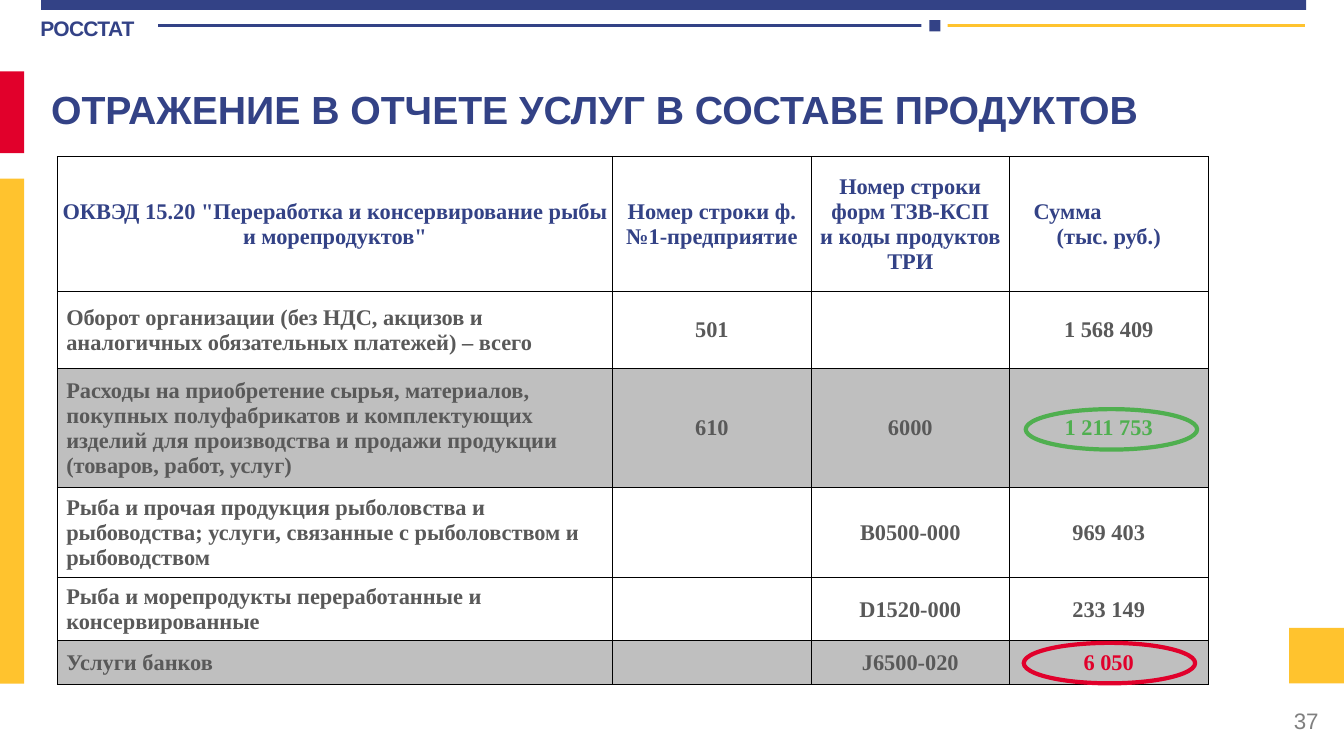
from dataclasses import dataclass

from lxml import etree
from pptx import Presentation
from pptx.enum import shapes, text
from pptx.oxml import ns
from pptx.util import Cm, Pt
from pptx.dml.color import RGBColor

COLORS = {
    "navy": "334286", "red": "E1002B", "amber": "FFC32E", "green": "4FAF4F",
    "gray": "595959", "band": "BFBFBF", "number": "808080",
    "white": "FFFFFF", "black": "000000",
}
CENTER, LEFT, RIGHT = text.PP_ALIGN.CENTER, text.PP_ALIGN.LEFT, text.PP_ALIGN.RIGHT
MIDDLE = text.MSO_ANCHOR.MIDDLE


@dataclass
class Bar:
    left: float
    top: float
    width: float
    height: float
    color: str


@dataclass
class Rule:
    start: float
    end: float
    color: str


@dataclass
class Ring:
    left: float
    top: float
    color: str


@dataclass
class Label:
    left: float
    top: float
    width: float
    height: float
    words: str
    size: int
    color: str
    bold: bool = True
    align: text.PP_ALIGN = LEFT
    margins: tuple = (0.25, 0.13, 0.25, 0.13)
    spacing: int = 0


@dataclass
class Row:
    height: float
    item: str
    line: str
    code: str
    amount: str
    banded: bool = False
    amount_color: str = "gray"


SIDE_BARS = [
    Bar(1.04, 0, 31.88, 0.25, "navy"),
    Bar(0, 1.8, 0.61, 2.06, "red"),
    Bar(0, 4.5, 0.61, 12.73, "amber"),
    Bar(32.49, 15.82, 1.38, 1.4, "amber"),
]
HEADER_RULES = [Rule(3.99, 23.7, "navy"), Rule(23.34, 32.89, "amber")]
HEADER_SQUARES = [
    Bar(23.22, 0.51, 0.66, 0.28, "white"),
    Bar(23.42, 0.51, 0.28, 0.28, "navy"),
]
LABELS = [
    Label(0.99, 0.33, 2.92, 0.81, "РОССТАТ", 15, "navy",
          margins=(0.03, 0.07, 0, 0), spacing=-50),
    Label(1.04, 1.98, 31.47, 1.55,
          "ОТРАЖЕНИЕ В ОТЧЕТЕ УСЛУГ В СОСТАВЕ ПРОДУКТОВ", 28, "navy"),
    Label(25.86, 17.65, 7.62, 1.02, "37", 16, "number", False, RIGHT),
]
COLUMN_WIDTHS = [14, 5, 5, 5]
HEADER_HEIGHT = 3.4
HEADINGS = [
    ['ОКВЭД 15.20 "Переработка и консервирование рыбы и морепродуктов"'],
    ["Номер строки ф.№1-предприятие"],
    ["Номер строки форм ТЗВ-КСП", "и коды продуктов ТРИ"],
    ["Сумма", "(тыс. руб.)"],
]
ROWS = [
    Row(1.94, "Оборот организации (без НДС, акцизов и аналогичных обязательных "
        "платежей) – всего", "501", "", "1 568 409"),
    Row(3, "Расходы на приобретение сырья, материалов, покупных полуфабрикатов и "
        "комплектующих изделий для производства и продажи продукции "
        "(товаров, работ, услуг)", "610", "6000", "1 211 753", True, "green"),
    Row(2.27, "Рыба и прочая продукция рыболовства и рыбоводства; услуги, связанные "
        "с рыболовством и рыбоводством", "", "B0500-000", "969 403"),
    Row(1.59, "Рыба и морепродукты переработанные и консервированные",
        "", "D1520-000", "233 149"),
    Row(1.11, "Услуги банков", "", "J6500-020", "6 050", True, "red"),
]
RINGS = [Ring(25.8, 16.2, "red"), Ring(25.85, 10.31, "green")]


def rgb(color: str) -> RGBColor:
    return RGBColor.from_string(COLORS[color])


def add_words(paragraph, words: str, font: str, size: int, color: str, bold: bool):
    run = paragraph.add_run()
    run.text = words
    run.font.name, run.font.size, run.font.bold = font, Pt(size), bold
    run.font.color.rgb = rgb(color)
    return run


def add_bar(slide, bar: Bar) -> None:
    block = slide.shapes.add_shape(shapes.MSO_SHAPE.RECTANGLE, Cm(bar.left), Cm(bar.top),
                                   Cm(bar.width), Cm(bar.height))
    block.shadow.inherit = False
    block.fill.solid()
    block.fill.fore_color.rgb = rgb(bar.color)
    block.line.fill.background()


def add_rule(slide, rule: Rule) -> None:
    stroke = slide.shapes.add_connector(shapes.MSO_CONNECTOR.STRAIGHT, Cm(rule.start),
                                        Cm(0.64), Cm(rule.end), Cm(0.64))
    stroke.line.color.rgb = rgb(rule.color)
    stroke.line.width = Pt(2)
    etree.SubElement(stroke._element.spPr, ns.qn("a:effectLst"))


def add_ring(slide, ring: Ring) -> None:
    oval = slide.shapes.add_shape(shapes.MSO_SHAPE.OVAL, Cm(ring.left), Cm(ring.top),
                                  Cm(4.32), Cm(1.02))
    oval.shadow.inherit = False
    oval.fill.background()
    oval.line.color.rgb = rgb(ring.color)
    oval.line.width = Pt(3)


def add_label(slide, label: Label) -> None:
    frame = slide.shapes.add_textbox(Cm(label.left), Cm(label.top), Cm(label.width),
                                     Cm(label.height)).text_frame
    frame.word_wrap = True
    frame.margin_left, frame.margin_top, frame.margin_right, frame.margin_bottom = (
        Cm(margin) for margin in label.margins)
    frame.vertical_anchor = text.MSO_ANCHOR.TOP if label.spacing else MIDDLE
    paragraph = frame.paragraphs[0]
    paragraph.alignment = label.align
    run = add_words(paragraph, label.words, "Arial", label.size, label.color, label.bold)
    if label.spacing:
        run._r.get_or_add_rPr().set("spc", str(label.spacing))


def style_cell(cell, banded: bool) -> None:
    cell.vertical_anchor = MIDDLE
    cell.margin_left = cell.margin_right = cell.margin_top = Cm(0.03)
    cell.margin_bottom = Cm(0)
    properties = cell._tc.get_or_add_tcPr()
    for side in ("lnL", "lnR", "lnT", "lnB"):
        border = etree.SubElement(properties, ns.qn(f"a:{side}"), w=str(Pt(0.5)))
        fill = etree.SubElement(border, ns.qn("a:solidFill"))
        etree.SubElement(fill, ns.qn("a:srgbClr"), val=COLORS["black"])
    if banded:
        cell.fill.solid()
        cell.fill.fore_color.rgb = rgb("band")
    else:
        cell.fill.background()


def fill_cell(cell, lines: list[str], color: str, indent: float = 0) -> None:
    """Centre the lines; a positive indent sets the first one from the left."""
    frame = cell.text_frame
    for index, words in enumerate(lines):
        paragraph = frame.add_paragraph() if index else frame.paragraphs[0]
        paragraph.alignment = CENTER
        if indent and not index:
            paragraph.alignment = LEFT
            paragraph._p.get_or_add_pPr().set("marL", str(Cm(indent)))
        add_words(paragraph, words, "Times New Roman", 16, color, True)


def add_report(slide) -> None:
    heights = [HEADER_HEIGHT] + [row.height for row in ROWS]
    report = slide.shapes.add_table(len(heights), len(COLUMN_WIDTHS), Cm(1.44), Cm(3.94),
                                    Cm(sum(COLUMN_WIDTHS)), Cm(sum(heights))).table
    report.first_row = report.horz_banding = False
    for column, width in zip(report.columns, COLUMN_WIDTHS):
        column.width = Cm(width)
    for line, height in zip(report.rows, heights):
        line.height = Cm(height)

    # Headings
    for column, lines in enumerate(HEADINGS):
        cell = report.cell(0, column)
        style_cell(cell, False)
        fill_cell(cell, lines, "navy", 0.58 if lines[0] == "Сумма" else 0)

    # Indicators
    for number, row in enumerate(ROWS, 1):
        for column, words in enumerate((row.item, row.line, row.code, row.amount)):
            cell = report.cell(number, column)
            style_cell(cell, row.banded)
            if words:
                fill_cell(cell, [words], row.amount_color if column == 3 else "gray",
                          0.2 if column == 0 else 0)


def main() -> None:
    deck = Presentation()
    deck.slide_width, deck.slide_height = Cm(33.87), Cm(19.05)
    slide = deck.slides.add_slide(deck.slide_layouts[6])

    # Frame of the slide
    for bar in SIDE_BARS:
        add_bar(slide, bar)
    for rule in HEADER_RULES:
        add_rule(slide, rule)
    for square in HEADER_SQUARES:
        add_bar(slide, square)

    # Content
    for label in LABELS:
        add_label(slide, label)
    add_report(slide)
    for ring in RINGS:
        add_ring(slide, ring)
    deck.save("out.pptx")


if __name__ == "__main__":
    main()
